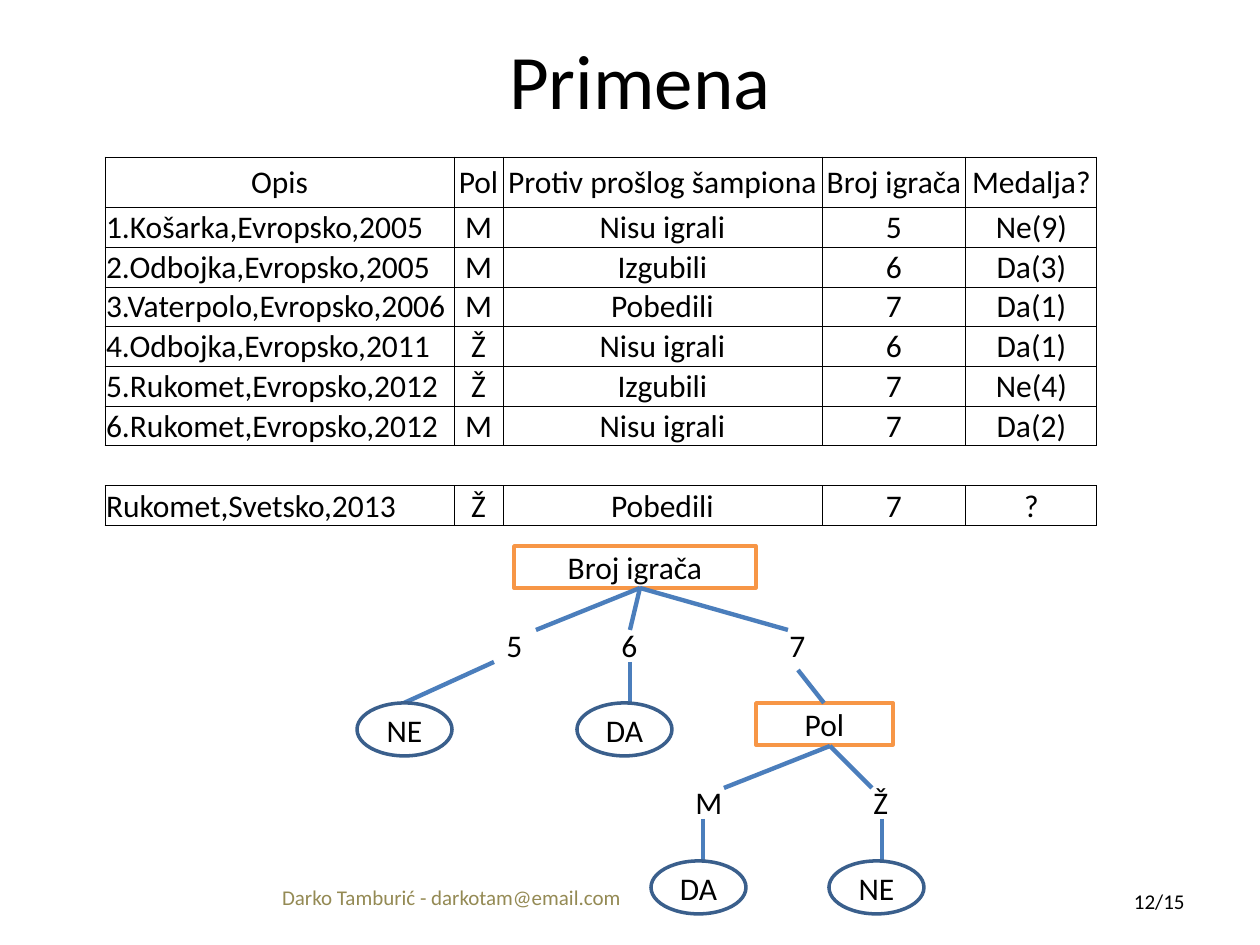
from itertools import pairwise

from lxml.etree import SubElement
from pptx import Presentation
from pptx.dml.color import RGBColor
from pptx.enum.shapes import MSO_CONNECTOR, MSO_SHAPE
from pptx.enum.text import MSO_ANCHOR, MSO_AUTO_SIZE, PP_ALIGN
from pptx.oxml.ns import qn
from pptx.util import Emu, Pt

PX = 914400 // 126
BLACK, WHITE, ORANGE, NAVY, BLUE, OLIVE = (
    "000000", "FFFFFF", "F79646", "3A5F8C", "4B7EBC", "948A54")

COLUMN_EDGES = [105, 454, 503, 822, 966, 1097]
ROW_EDGES = [157, 207, 247, 287, 326, 366, 406, 445, 485, 525]
MATCHES = [
    ["Opis", "Pol", "Protiv prošlog šampiona", "Broj igrača", "Medalja?"],
    ["1.Košarka,Evropsko,2005", "M", "Nisu igrali", "5", "Ne(9)"],
    ["2.Odbojka,Evropsko,2005", "M", "Izgubili", "6", "Da(3)"],
    ["3.Vaterpolo,Evropsko,2006", "M", "Pobedili", "7", "Da(1)"],
    ["4.Odbojka,Evropsko,2011", "Ž", "Nisu igrali", "6", "Da(1)"],
    ["5.Rukomet,Evropsko,2012", "Ž", "Izgubili", "7", "Ne(4)"],
    ["6.Rukomet,Evropsko,2012", "M", "Nisu igrali", "7", "Da(2)"],
    [""] * 5,
    ["Rukomet,Svetsko,2013", "Ž", "Pobedili", "7", "?"],
]

BRANCHES = [
    (640, 588, 536, 630), (640, 588, 630, 630), (640, 588, 788, 630),
    (494, 662, 404, 703), (630, 662, 630, 703), (798, 670, 824, 703),
    (830, 746, 724, 788), (830, 746, 872, 788),
    (703, 819, 703, 861), (882, 819, 882, 861),
]
QUESTIONS = [("Broj igrača", 514, 546, 242), ("Pol", 756, 703, 137)]
ANSWERS = [("5", 494, 620, 42), ("6", 609, 620, 42), ("7", 777, 620, 42),
           ("M", 683, 777, 53), ("Ž", 861, 777, 40)]
OUTCOMES = [("NE", 357, 703), ("DA", 577, 703), ("DA", 651, 861), ("NE", 829, 861)]


def color(hex_value):
    return RGBColor.from_string(hex_value)


def px(*lengths):
    return [Emu(length * PX) for length in lengths]


def apply(target, values):
    for name, value in values.items():
        setattr(target, name, value)


def set_borders(cell, sides):
    """Draw a thin black border on the named sides (L, R, T, B) and none elsewhere."""
    properties = cell._tc.get_or_add_tcPr()
    for position, side in enumerate("LRTB"):
        line = SubElement(properties, qn(f"a:ln{side}"), w=str(Pt(0.5)))
        properties.remove(line)
        properties.insert(position, line)
        if side in sides:
            fill = SubElement(line, qn("a:solidFill"))
            SubElement(fill, qn("a:srgbClr"), val=BLACK)
        else:
            SubElement(line, qn("a:noFill"))


class TreeSlide:
    font = "Calibri"
    cell_format = {"vertical_anchor": MSO_ANCHOR.MIDDLE, "margin_left": Emu(PX),
                   "margin_right": Emu(PX), "margin_top": Emu(PX), "margin_bottom": 0}

    def __init__(self, slide):
        self.slide = slide

    def add_text(self, frame, text, size=18, ink=BLACK, align=PP_ALIGN.CENTER):
        paragraph = frame.paragraphs[0]
        paragraph.alignment = align
        run = paragraph.add_run()
        run.text = text
        apply(run.font, {"name": self.font, "size": Pt(size)})
        run.font.color.rgb = color(ink)

    def title(self, text, *box):
        title = self.slide.shapes.title
        apply(title, dict(zip(("left", "top", "width", "height"), px(*box))))
        title.text_frame.vertical_anchor = MSO_ANCHOR.MIDDLE
        self.add_text(title.text_frame, text, 44)

    def table(self, rows, column_edges, row_edges):
        left, top = column_edges[0], row_edges[0]
        box = px(left, top, column_edges[-1] - left, row_edges[-1] - top)
        table = self.slide.shapes.add_table(len(rows), len(rows[0]), *box).table
        apply(table, {"first_row": False, "horz_banding": False})
        for column, (start, end) in zip(table.columns, pairwise(column_edges)):
            column.width = Emu((end - start) * PX)
        for row, (start, end) in zip(table.rows, pairwise(row_edges)):
            row.height = Emu((end - start) * PX)
        for r, texts in enumerate(rows):
            for c, text in enumerate(texts):
                cell = table.cell(r, c)
                apply(cell, self.cell_format)
                cell.fill.background()
                set_borders(cell, "LRTB" if text else "TB")
                if text:
                    align = PP_ALIGN.LEFT if c == 0 and r else PP_ALIGN.CENTER
                    self.add_text(cell.text_frame, text, align=align)

    def node(self, kind, text, outline, *box):
        shape = self.slide.shapes.add_shape(kind, *px(*box))
        shape.shadow.inherit = False
        shape.fill.solid()
        shape.fill.fore_color.rgb = color(WHITE)
        shape.line.color.rgb = color(outline)
        shape.line.width = Pt(2)
        shape.text_frame.vertical_anchor = MSO_ANCHOR.MIDDLE
        self.add_text(shape.text_frame, text)

    def branch(self, *ends):
        line = self.slide.shapes.add_connector(MSO_CONNECTOR.STRAIGHT, *px(*ends))
        line.line.color.rgb = color(BLUE)
        line.line.width = Pt(2.5)
        SubElement(line._element.spPr, qn("a:effectLst"))

    def label(self, text, *box):
        frame = self.slide.shapes.add_textbox(*px(*box)).text_frame
        apply(frame, {"word_wrap": False, "auto_size": MSO_AUTO_SIZE.SHAPE_TO_FIT_TEXT})
        self.add_text(frame, text, align=PP_ALIGN.LEFT)

    def footer(self, text, ink, align, *box):
        frame = self.slide.shapes.add_textbox(*px(*box)).text_frame
        apply(frame, {"word_wrap": True, "vertical_anchor": MSO_ANCHOR.MIDDLE})
        self.add_text(frame, text, 12, ink, align)


def main():
    deck = Presentation()
    deck.slide_width, deck.slide_height = px(1260, 945)
    page = TreeSlide(deck.slides.add_slide(deck.slide_layouts[5]))
    page.title("Primena", 73, 0, 1134, 158)
    page.table(MATCHES, COLUMN_EDGES, ROW_EDGES)
    for text, left, top, width in QUESTIONS:
        page.node(MSO_SHAPE.RECTANGLE, text, ORANGE, left, top, width, 42)
    for ends in BRANCHES:
        page.branch(*ends)
    for text, left, top, width in ANSWERS:
        page.label(text, left, top, width, 50)
    for text, left, top in OUTCOMES:
        page.node(MSO_SHAPE.OVAL, text, NAVY, left, top, 95, 53)
    page.footer("Darko Tamburić - darkotam@email.com", OLIVE, PP_ALIGN.CENTER,
                252, 872, 399, 50)
    page.footer("12/15", BLACK, PP_ALIGN.RIGHT, 903, 876, 294, 50)
    deck.save("out.pptx")


if __name__ == "__main__":
    main()
